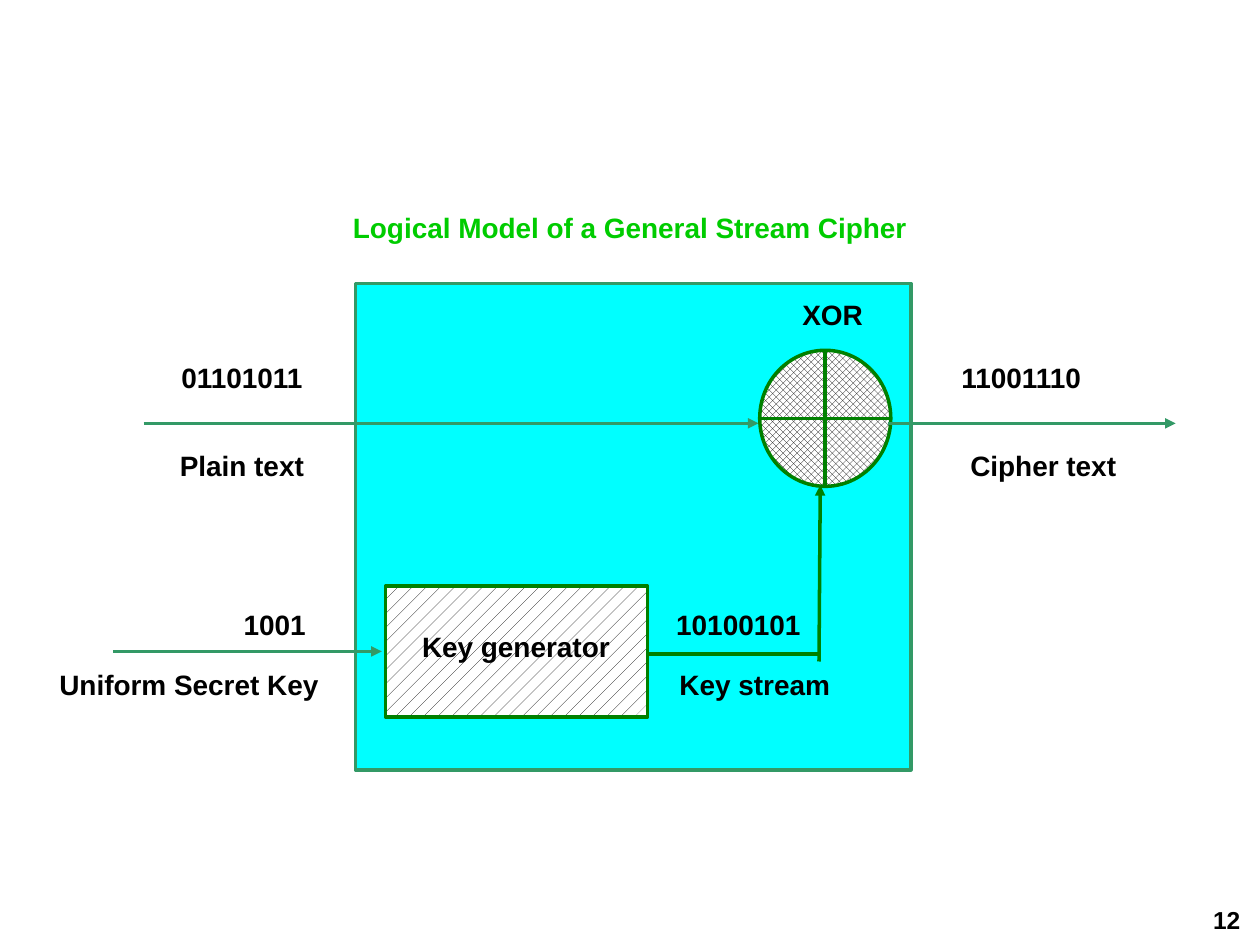
from lxml import etree
from pptx import Presentation
from pptx.dml.color import RGBColor
from pptx.enum.dml import MSO_PATTERN as Pat
from pptx.enum.shapes import MSO_CONNECTOR as Conn, MSO_SHAPE as Geo
from pptx.enum.text import PP_ALIGN as Align
from pptx.oxml.ns import qn
from pptx.util import Inches, Pt

BLACK, WHITE, CYAN = "000000", "FFFFFF", "00FFFF"
GREEN, TEAL, LIME = "008000", "339966", "00CC00"


def paint(color, code):
    """Set a colour format from a hex string."""
    color.rgb = RGBColor.from_string(code)


def label(slide, text, x, y, w, size=16, code=BLACK, align=Align.CENTER):
    """Place one line of bold text."""
    box = slide.shapes.add_textbox(Inches(x), Inches(y), Inches(w), Inches(0.37))
    box.text_frame.word_wrap = True
    para = box.text_frame.paragraphs[0]
    para.text = text
    para.alignment = align
    font = para.font
    font.name, font.size, font.bold = "Arial", Pt(size), True
    paint(font.color, code)


def block(slide, kind, x, y, w, h, edge, pattern=None):
    """Place an outlined shape with a cyan or patterned fill."""
    shape = slide.shapes.add_shape(kind, Inches(x), Inches(y), Inches(w), Inches(h))
    shape.shadow.inherit = False
    if pattern is None:
        shape.fill.solid()
        paint(shape.fill.fore_color, CYAN)
    else:
        shape.fill.patterned()
        shape.fill.pattern = pattern
        paint(shape.fill.fore_color, BLACK)
        paint(shape.fill.back_color, WHITE)
    paint(shape.line.color, edge)
    shape.line.width = Pt(2)


def wire(slide, x1, y1, x2, y2, code, head=True):
    """Draw a straight line, with an arrowhead at its end if asked."""
    line = slide.shapes.add_connector(
        Conn.STRAIGHT, Inches(x1), Inches(y1), Inches(x2), Inches(y2))
    paint(line.line.color, code)
    line.line.width = Pt(2)
    props = line._element.spPr
    if head:
        etree.SubElement(props.find(qn("a:ln")), qn("a:tailEnd"), type="triangle")
    etree.SubElement(props, qn("a:effectLst"))


def cipher(slide, x, y, w, h):
    """Draw the cipher box with its key generator and XOR gate."""
    block(slide, Geo.RECTANGLE, x, y, w, h, TEAL)
    label(slide, "10100101", x + 2.34, y + 2.52, 1.4)
    label(slide, "Key stream", x + 2.26, y + 3, 1.82)
    block(slide, Geo.FLOWCHART_OR, x + 3.21, y + 0.53, 1.04, 1.08, GREEN, Pat.OUTLINED_DIAMOND)
    wire(slide, x + 3.68, y + 3, x + 3.69, y + 1.6, GREEN)
    wire(slide, x + 3.69, y + 2.94, x + 2.32, y + 2.94, GREEN, head=False)
    block(slide, Geo.RECTANGLE, x + 0.24, y + 2.4, 2.08, 1.04, GREEN, Pat.PERCENT_10)
    label(slide, "XOR", x + 3.45, y + 0.06, 0.8, align=Align.LEFT)
    label(slide, "Key generator", x + 0.24, y + 2.7, 2.07)


def plain(slide, x, y, w):
    """Draw the plain text input."""
    label(slide, "01101011", x, y, 1.56)
    label(slide, "Plain text", x + 0.08, y + 0.7, 1.4)
    wire(slide, x, y + 0.55, x + w, y + 0.55, TEAL)


def secret(slide, x, y, w):
    """Draw the secret key input."""
    label(slide, "1001", x + 0.71, y, 1.14)
    label(slide, "Uniform Secret Key", x - 0.7, y + 0.48, 2.6)
    wire(slide, x, y + 0.4, x + w, y + 0.4, TEAL)


def output(slide, x, y, w):
    """Draw the cipher text output."""
    label(slide, "11001110", x + 0.31, y, 1.49)
    label(slide, "Cipher text", x + 0.47, y + 0.7, 1.52)
    wire(slide, x, y + 0.55, x + w, y + 0.55, TEAL)


def main():
    """Build and save the slide."""
    deck = Presentation()
    deck.slide_width, deck.slide_height = Inches(10), Inches(7.5)
    slide = deck.slides.add_slide(deck.slide_layouts[6])
    label(slide, "Logical Model of a General Stream Cipher", 0, 1.62, 10, code=LIME)
    cipher(slide, 2.82, 2.25, 4.41, 3.86)
    plain(slide, 1.14, 2.81, 4.88)
    secret(slide, 0.9, 4.77, 2.13)
    output(slide, 7.05, 2.81, 2.28)
    label(slide, "12", 9.53, 7.13, 0.47, size=14, align=Align.LEFT)
    deck.save("out.pptx")


if __name__ == "__main__":
    main()
